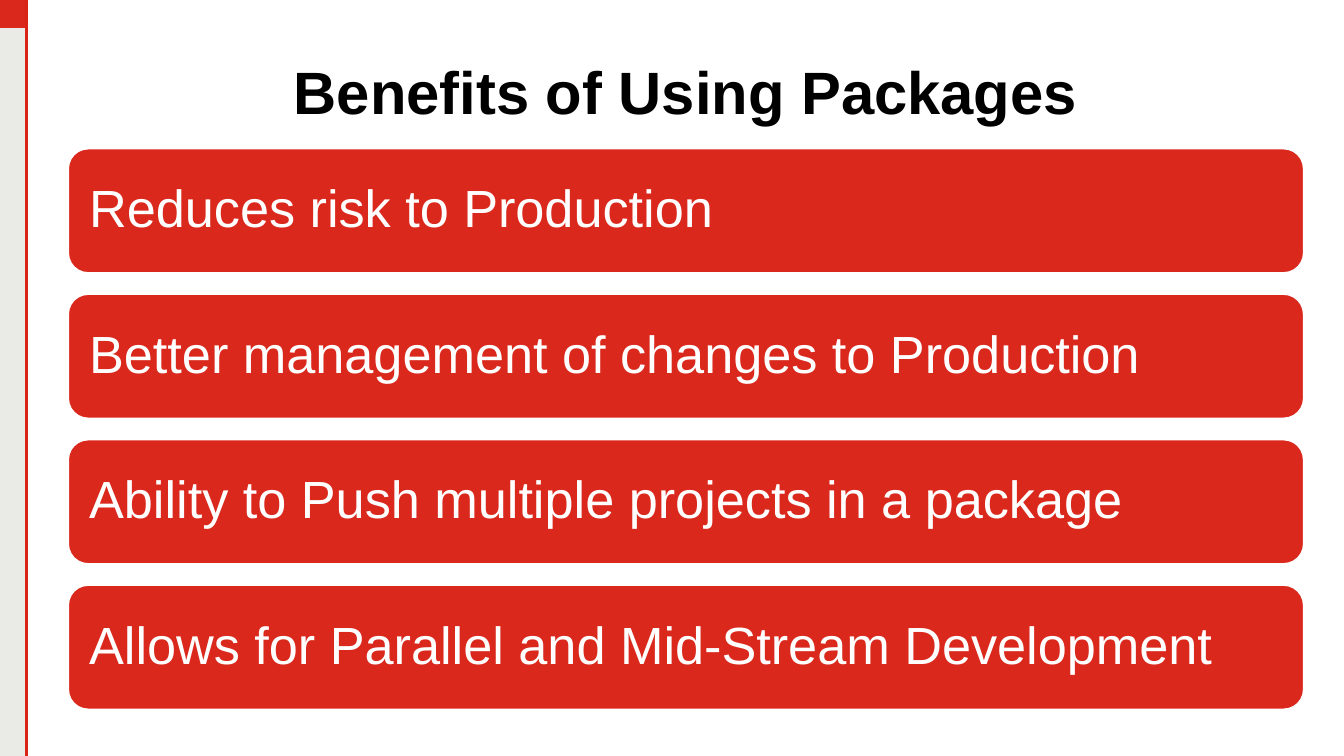
"""Build the slide on the benefits of using packages."""
from pptx import Presentation
from pptx import util as u
from pptx.dml.color import RGBColor
from pptx.enum import shapes, text
from pptx.oxml.ns import qn
from lxml import etree


def paint(color_format, value):
    color_format.rgb = RGBColor.from_string(value)


def add_block(kind, left, top, width, height, fill):
    block = page.shapes.add_shape(kind, u.Cm(left), u.Cm(top), u.Cm(width), u.Cm(height))
    block.shadow.inherit = False
    block.fill.solid()
    paint(block.fill.fore_color, fill)
    block.line.fill.background()
    return block


RED = "DA281C"
WHITE = "FFFFFF"
BENEFITS = [
    "Reduces risk to Production",
    "Better management of changes to Production",
    "Ability to Push multiple projects in a package",
    "Allows for Parallel and Mid-Stream Development",
]

deck = Presentation()
deck.slide_width = u.Cm(25.4)
deck.slide_height = u.Cm(14.29)
page = deck.slides.add_slide(deck.slide_layouts[5])
page.background.fill.solid()
paint(page.background.fill.fore_color, WHITE)

add_block(shapes.MSO_SHAPE.RECTANGLE, 0, 0, 0.5, 14.29, "EAEAE6")
add_block(shapes.MSO_SHAPE.RECTANGLE, 0, 0, 0.53, 0.53, RED)
rule = page.shapes.add_connector(
    shapes.MSO_CONNECTOR.STRAIGHT, u.Cm(0.5), u.Cm(0), u.Cm(0.5), u.Cm(14.29))
rule.line.width = u.Pt(1.5)
paint(rule.line.color, "DA2317")
etree.SubElement(rule.element.spPr, qn("a:effectLst"))

title = page.shapes.title
title.left, title.top, title.width, title.height = u.Cm(1.27), u.Cm(0.79), u.Cm(23.39), u.Cm(1.27)
frame = title.text_frame
frame.text = "Benefits of Using Packages"
frame.auto_size = text.MSO_AUTO_SIZE.NONE
frame.vertical_anchor = text.MSO_ANCHOR.TOP
frame.margin_top = u.Cm(0.25)
para = frame.paragraphs[0]
para.alignment = text.PP_ALIGN.CENTER
span = para.runs[0]
span.font.name, span.font.size, span.font.bold = "Arial", u.Pt(32), True
paint(span.font.color, "000000")

for row, benefit in enumerate(BENEFITS):
    box = add_block(shapes.MSO_SHAPE.ROUNDED_RECTANGLE, 1.27, 2.79 + row * 2.75, 23.39, 2.39, RED)
    paint(box.line.color, WHITE)
    box.line.width = u.Pt(2)
    frame = box.text_frame
    frame.text = benefit
    frame.word_wrap = True
    frame.vertical_anchor = text.MSO_ANCHOR.MIDDLE
    frame.margin_left = frame.margin_right = u.Cm(0.3)
    para = frame.paragraphs[0]
    para.alignment = text.PP_ALIGN.LEFT
    para.line_spacing = 0.9
    span = para.runs[0]
    span.font.name, span.font.size = "Arial", u.Pt(28)
    paint(span.font.color, WHITE)

deck.save("out.pptx")
